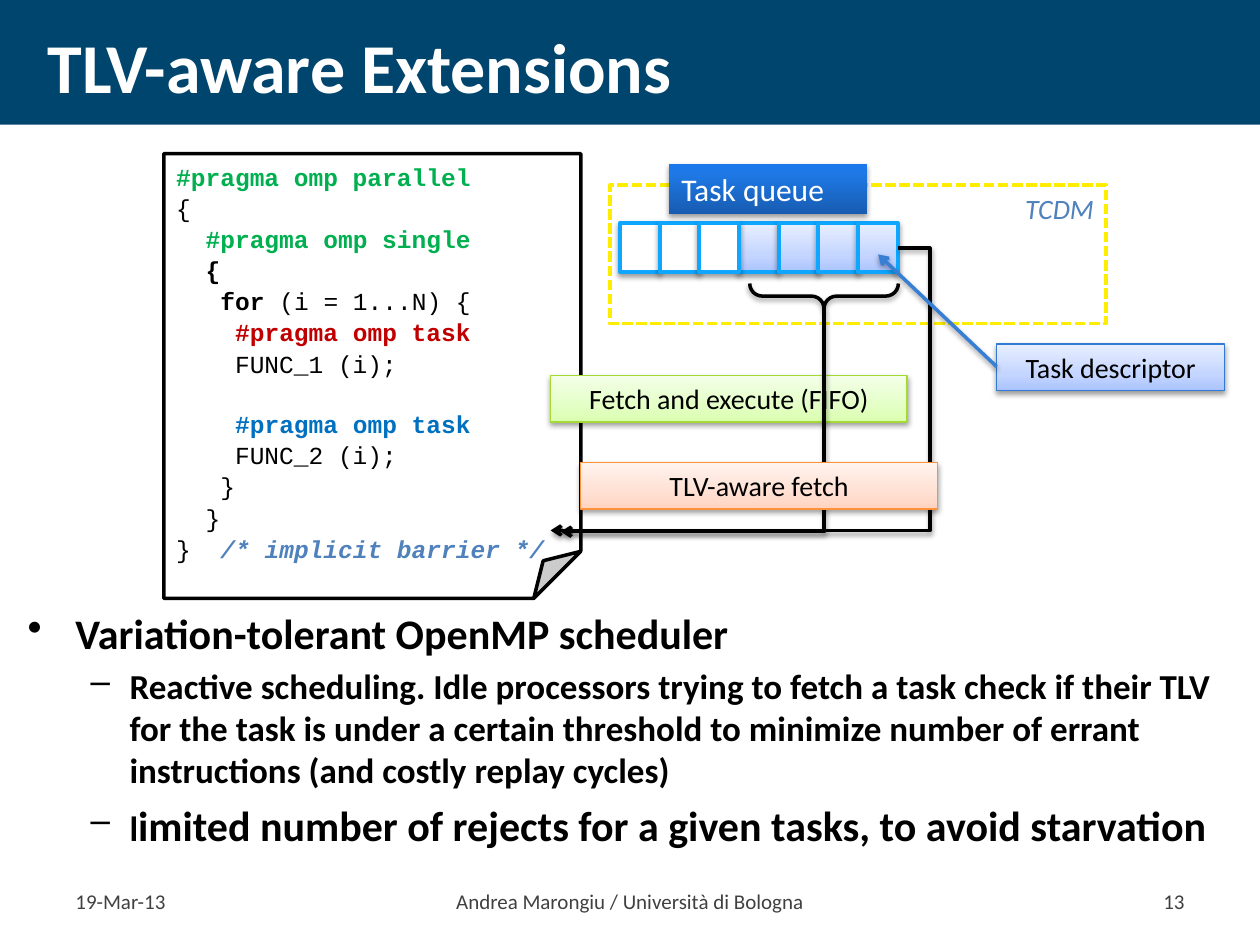
from collections import namedtuple
from copy import deepcopy
from dataclasses import dataclass

from lxml import etree
from pptx import Presentation
from pptx.dml.color import RGBColor
from pptx.enum.dml import MSO_LINE
from pptx.enum.shapes import MSO_CONNECTOR, MSO_SHAPE
from pptx.enum.text import MSO_ANCHOR, PP_ALIGN
from pptx.oxml.ns import qn
from pptx.util import Inches, Pt

RECTANGLE, PAGE, BRACE = MSO_SHAPE.RECTANGLE, MSO_SHAPE.FOLDED_CORNER, MSO_SHAPE.LEFT_BRACE
STRAIGHT, ELBOW = MSO_CONNECTOR.STRAIGHT, MSO_CONNECTOR.ELBOW
LEFT, CENTER, RIGHT = PP_ALIGN.LEFT, PP_ALIGN.CENTER, PP_ALIGN.RIGHT
TOP, MIDDLE = MSO_ANCHOR.TOP, MSO_ANCHOR.MIDDLE
DASHED = MSO_LINE.SQUARE_DOT

BLACK, WHITE, GREY = "000000", "FFFFFF", "404040"
GREEN, RED, BLUE, SLATE = "00B050", "C00000", "0070C0", "4F81BD"
BLUE_FADE = ((0, "ABC4FF"), (0.35, "C4D5FF"), (1, "E8EFFF"))
GREEN_FADE = ((0, "D9FFAE"), (0.35, "E4FFC6"), (1, "F4FFE9"))
ORANGE_FADE = ((0, "FFD3C0"), (0.35, "FFE0D3"), (1, "FFF3EE"))
QUEUE_FADE = ((0, "175CB1"), (0.8, "1E78E5"), (1, "1B78EA"))

Box = namedtuple("Box", "left top width height")
Run = namedtuple("Run", "text size color bold italic font",
                 defaults=(14, BLACK, False, False, "Calibri"))
Bullet = namedtuple("Bullet", "mark margin indent level")
Line = namedtuple("Line", "runs align space spacing bullet", defaults=(LEFT, 0, 1, None))


@dataclass
class Label:
    text: str
    box: Box
    fade: tuple
    line: str | None
    size: int = 16
    color: str = BLACK
    align: PP_ALIGN = CENTER


def code(text: str, color: str = BLACK, bold: bool = False, italic: bool = False) -> Run:
    return Run(text, 14, color, bold, italic, "Courier New")


CODE = (
    (code("#pragma omp parallel", GREEN, True),),
    (code("{"),),
    (code("  "), code("#pragma omp single", GREEN, True)),
    (code("  {", BLACK, True),),
    (code("   for ", BLACK, True), code("(i = 1...N) {")),
    (code("    "), code("#pragma omp task", RED, True)),
    (code("    FUNC_1 (i);"),),
    (code("    "), code("#pragma omp task", BLUE, True)),
    (code("    FUNC_2 (i);"),),
    (code("   }"),),
    (code("  }"),),
    (code("}  "), code("/* implicit barrier */", SLATE, True, True)),
)
SECOND_TASK = 7

DOT = Bullet("•", 0.38, -0.38, 0)
DASH = Bullet("–", 0.81, -0.31, 1)
BODY = (
    Line((Run("Variation-tolerant OpenMP scheduler", 24, BLACK, True),), LEFT, 4.8, 1, DOT),
    Line((Run("Reactive scheduling. Idle processors trying to fetch a task check if "
              "their TLV for the task is under a certain threshold to minimize number "
              "of errant instructions (and costly replay cycles)", 20, BLACK, True),),
         LEFT, 4, 1, DASH),
    Line((Run("l", 20, BLACK, True),
          Run("imited number of rejects for a given tasks, to avoid starvation", 24, BLACK, True)),
         LEFT, 4.8, 1, DASH),
)

QUEUE_LABEL = Label("Task queue", Box(5.31, 1.3, 1.57, 0.4), QUEUE_FADE, None, 18, WHITE, LEFT)
FIFO_LABEL = Label("Fetch and execute (FIFO)", Box(4.37, 2.98, 2.83, 0.37), GREEN_FADE, "A3DA34")
TLV_LABEL = Label("TLV-aware fetch", Box(4.61, 3.67, 2.83, 0.37), ORANGE_FADE, "FE9239")
TASK_LABEL = Label("Task descriptor", Box(7.91, 2.73, 1.81, 0.37), BLUE_FADE, "327BD4")


def rgb(value: str) -> RGBColor:
    return RGBColor.from_string(value)


def add_shadow(properties) -> None:
    effects = properties.find(qn("a:effectLst"))
    if effects is None:
        effects = etree.SubElement(properties, qn("a:effectLst"))
    shadow = etree.SubElement(effects, qn("a:outerShdw"), blurRad="39370", dist="20320",
                              dir="5400000", rotWithShape="0")
    color = etree.SubElement(shadow, qn("a:srgbClr"), val=BLACK)
    etree.SubElement(color, qn("a:alpha"), val="38000")


def set_guides(properties, **guides: int) -> None:
    values = properties.find(qn("a:prstGeom")).find(qn("a:avLst"))
    for guide in list(values):
        values.remove(guide)
    for name, value in guides.items():
        etree.SubElement(values, qn("a:gd"), name=name, fmla=f"val {value}")


def add_block(slide, kind, box: Box, fill=None, line=None, weight: float = 2, shadow=False):
    shape = slide.shapes.add_shape(kind, *map(Inches, box))
    shape.shadow.inherit = False
    if shadow:
        add_shadow(shape._element.spPr)
    if fill is None:
        shape.fill.background()
    elif isinstance(fill, str):
        shape.fill.solid()
        shape.fill.fore_color.rgb = rgb(fill)
    else:
        shape.fill.gradient()
        shape.fill.gradient_angle = 90
        stops = shape._element.spPr.find(qn("a:gradFill")).find(qn("a:gsLst"))
        stops.append(deepcopy(stops[-1]))
        for stop, (position, color) in zip(shape.fill.gradient_stops, fill):
            stop.position = position
            stop.color.rgb = rgb(color)
    if line is None:
        shape.line.fill.background()
    else:
        shape.line.color.rgb = rgb(line)
        shape.line.width = Pt(weight)
    return shape


def write(shape, lines, anchor=MIDDLE) -> None:
    frame = shape.text_frame
    frame.word_wrap = True
    frame.vertical_anchor = anchor
    for index, line in enumerate(lines):
        paragraph = frame.add_paragraph() if index else frame.paragraphs[0]
        paragraph.alignment, paragraph.line_spacing = line.align, line.spacing
        paragraph.space_before = Pt(line.space)
        if line.bullet:
            paragraph.level = line.bullet.level
            properties = paragraph._p.get_or_add_pPr()
            properties.set("marL", str(Inches(line.bullet.margin)))
            properties.set("indent", str(Inches(line.bullet.indent)))
            etree.SubElement(properties, qn("a:buChar"), char=line.bullet.mark)
        for item in line.runs:
            run = paragraph.add_run()
            run.text = item.text
            font = run.font if len(line.runs) > 1 else paragraph.font
            font.name, font.size = item.font, Pt(item.size)
            font.bold, font.italic = item.bold, item.italic
            font.color.rgb = rgb(item.color)


def add_text(slide, box: Box, lines, anchor=MIDDLE) -> None:
    write(slide.shapes.add_textbox(*map(Inches, box)), lines, anchor)


def add_label(slide, label: Label) -> None:
    shape = add_block(slide, RECTANGLE, label.box, label.fade, label.line, 0.75, True)
    write(shape, [Line((Run(label.text, label.size, label.color),), label.align)])


def add_arrow(slide, kind, start: tuple, end: tuple, color: str = BLACK):
    connector = slide.shapes.add_connector(kind, *map(Inches, start + end))
    connector.line.color.rgb = rgb(color)
    connector.line.width = Pt(2)
    properties = connector._element.spPr
    etree.SubElement(properties.find(qn("a:ln")), qn("a:tailEnd"), type="arrow")
    add_shadow(properties)
    return properties


def add_flow(slide) -> None:
    set_guides(add_arrow(slide, ELBOW, (7.13, 1.97), (4.37, 4.21)), adj1=-9100)
    add_label(slide, FIFO_LABEL)
    inner = add_arrow(slide, ELBOW, (4.61, 2.29), (6.38, 4.38))
    inner.find(qn("a:xfrm")).set("rot", "5400000")
    inner.find(qn("a:prstGeom")).set("prst", "bentConnector2")
    add_label(slide, TLV_LABEL)
    brace = add_block(slide, BRACE, Box(6.44, 1.76, 0.2, 1.18), None, BLACK, 2, True)
    brace.rotation = 270
    set_guides(brace._element.spPr, adj1=50000, adj2=50000)
    add_label(slide, TASK_LABEL)
    add_arrow(slide, STRAIGHT, (7.91, 2.91), (6.97, 2.02), "377ED5")


presentation = Presentation()
presentation.slide_width, presentation.slide_height = Inches(10), Inches(7.5)
slide = presentation.slides.add_slide(presentation.slide_layouts[6])
add_block(slide, RECTANGLE, Box(0, 0, 10, 0.99), "00456E")
add_text(slide, Box(0.28, 0.1, 9.45, 0.84), [Line((Run("TLV-aware Extensions", 40, WHITE, True),))])
for text, left, width, align in (("19-Mar-13", 0.5, 1.19, LEFT), ("13", 8.31, 1.19, RIGHT),
                                 ("Andrea Marongiu / Università di Bologna", 1.85, 6.3, CENTER)):
    add_text(slide, Box(left, 6.95, width, 0.4), [Line((Run(text, 12, GREY),), align)])
page = add_block(slide, PAGE, Box(1.3, 1.22, 3.31, 3.53), WHITE, BLACK)
set_guides(page._element.spPr, adj=11300)
write(page, [Line(runs, LEFT, 16.8 if index == SECOND_TASK else 0, 1.06)
             for index, runs in enumerate(CODE)], TOP)
memory = add_block(slide, RECTANGLE, Box(4.84, 1.47, 3.94, 1.1), WHITE, "FFED00")
memory.line.dash_style = DASHED
write(memory, [Line((Run("TCDM", 16, SLATE, False, True),), RIGHT)], TOP)
add_text(slide, Box(0.12, 4.77, 9.69, 2.1), BODY, TOP)
for index in (3, 4, 5, 6, 0, 1, 2):
    add_block(slide, RECTANGLE, Box(4.92 + index * 0.315, 1.77, 0.315, 0.39),
              BLUE_FADE if index > 2 else WHITE, "0FA6FF", 2.25, True)
add_label(slide, QUEUE_LABEL)
add_flow(slide)
presentation.save("out.pptx")
